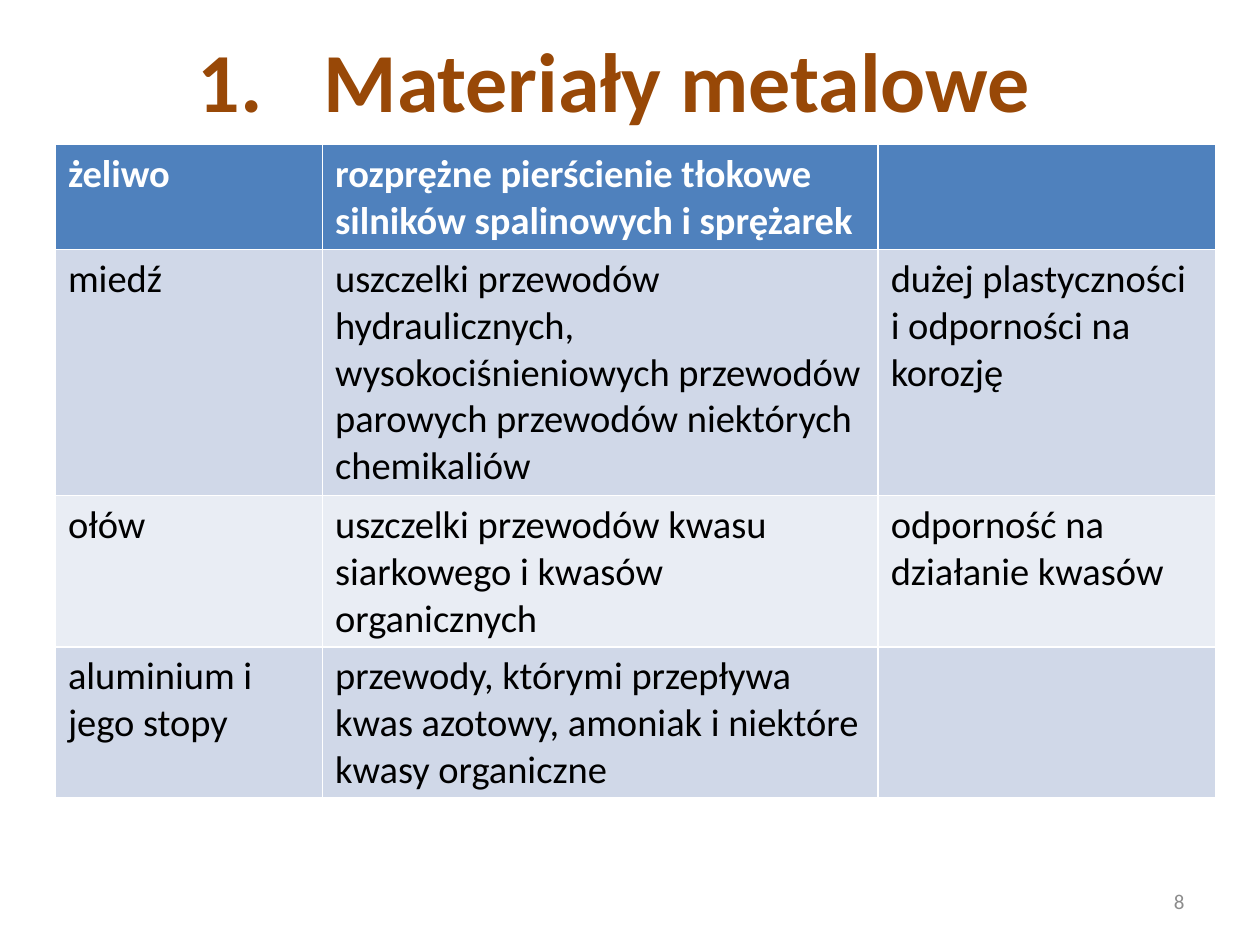
from dataclasses import dataclass

from lxml import etree
from pptx import Presentation
from pptx.dml.color import RGBColor
from pptx.enum.text import MSO_ANCHOR, PP_ALIGN
from pptx.oxml.ns import qn
from pptx.util import Inches, Pt

MIDDLE = MSO_ANCHOR.MIDDLE
CENTER, RIGHT = PP_ALIGN.CENTER, PP_ALIGN.RIGHT
BLANK_LAYOUT = 6
PAGE_WIDTH, PAGE_HEIGHT = 10, 7.5


@dataclass(frozen=True)
class Theme:
    font: str = "Calibri"
    title: str = "984807"
    header_fill: str = "4F81BD"
    header_text: str = "FFFFFF"
    band_fills: tuple = ("D0D8E8", "E9EDF4")
    body_text: str = "000000"
    muted: str = "8C8C8C"
    title_size: int = 48
    table_size: int = 22
    number_size: int = 12


THEME = Theme()

# Boxes: left, top, width, height as shares of the page
TITLE_BOX = (0.045, 0, 0.9, 0.167)
TABLE_BOX = (0.044, 0.153, 0.921, 0.69)
NUMBER_BOX = (0.717, 0.927, 0.233, 0.053)

# Table grid: relative column widths and row heights
COLUMNS = (2.12, 4.41, 2.68)
ROWS = (0.82, 1.95, 1.2, 1.2)

TITLE = "Materiały metalowe "
MATERIALS = (
    ("żeliwo",
     "rozprężne pierścienie tłokowe silników spalinowych i sprężarek",
     ""),
    ("miedź",
     "uszczelki przewodów hydraulicznych, wysokociśnieniowych przewodów "
     "parowych przewodów niektórych chemikaliów",
     "dużej plastyczności i odporności na korozję"),
    ("ołów",
     "uszczelki przewodów kwasu siarkowego i kwasów organicznych",
     "odporność na działanie kwasów"),
    ("aluminium i jego stopy",
     "przewody, którymi przepływa kwas azotowy, amoniak i niektóre "
     "kwasy organiczne",
     ""),
)


def to_lengths(box):
    left, top, width, height = box
    return (Inches(left * PAGE_WIDTH), Inches(top * PAGE_HEIGHT),
            Inches(width * PAGE_WIDTH), Inches(height * PAGE_HEIGHT))


def write(para, text, size, color, bold=False):
    span = para.add_run()
    span.text = text
    formats = {"name": THEME.font, "size": Pt(size), "bold": bold}
    for name, value in formats.items():
        setattr(span.font, name, value)
    span.font.color.rgb = RGBColor.from_string(color)


def add_text(page, box, align):
    """Add a wrapped, vertically centred text box; return its paragraph."""
    frame = page.shapes.add_textbox(*to_lengths(box)).text_frame
    frame.word_wrap = True
    frame.vertical_anchor = MIDDLE
    para = frame.paragraphs[0]
    para.alignment = align
    return para


def add_title(page, box):
    para = add_text(page, box, CENTER)
    write(para, TITLE, THEME.title_size, THEME.title, bold=True)
    # Automatic number with a hanging indent
    properties = para._p.get_or_add_pPr()
    indent = Inches(1)
    properties.set("marL", str(indent))
    properties.set("indent", str(-indent))
    etree.SubElement(properties, qn("a:buFont"), typeface="+mj-lt")
    etree.SubElement(properties, qn("a:buAutoNum"), type="arabicPeriod")


def add_materials_table(page, box):
    lengths = to_lengths(box)
    table = page.shapes.add_table(len(ROWS), len(COLUMNS), *lengths).table
    for column, share in zip(table.columns, COLUMNS):
        column.width = int(lengths[2] * share / sum(COLUMNS))
    for row, share in zip(table.rows, ROWS):
        row.height = int(lengths[3] * share / sum(ROWS))

    for row_index, texts in enumerate(MATERIALS):
        header = row_index == 0
        fill = THEME.header_fill if header else THEME.band_fills[(row_index - 1) % 2]
        color = THEME.header_text if header else THEME.body_text
        for column_index, text in enumerate(texts):
            cell = table.cell(row_index, column_index)
            cell.fill.solid()
            cell.fill.fore_color.rgb = RGBColor.from_string(fill)
            if text:
                write(cell.text_frame.paragraphs[0], text,
                      THEME.table_size, color, bold=header)


def add_page_number(page, box):
    write(add_text(page, box, RIGHT), "8", THEME.number_size, THEME.muted)


def main():
    deck = Presentation()
    deck.slide_width, deck.slide_height = Inches(PAGE_WIDTH), Inches(PAGE_HEIGHT)
    page = deck.slides.add_slide(deck.slide_layouts[BLANK_LAYOUT])
    add_title(page, TITLE_BOX)
    add_materials_table(page, TABLE_BOX)
    add_page_number(page, NUMBER_BOX)
    deck.save("out.pptx")


if __name__ == "__main__":
    main()
